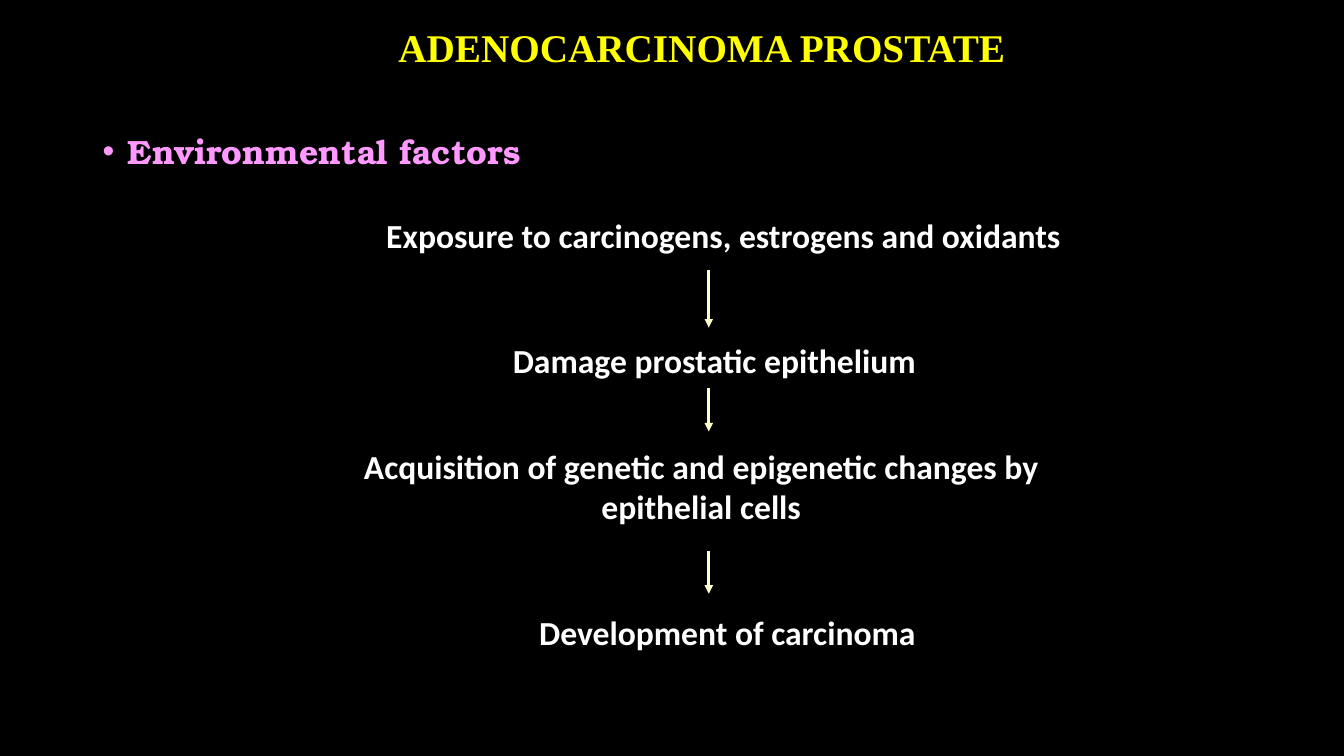
import pptx
import pptx.util
import pptx.dml.color
import pptx.enum.shapes
import pptx.enum.text
import pptx.oxml.ns
import lxml.etree

Inches, Pt = pptx.util.Inches, pptx.util.Pt
ALIGN = pptx.enum.text.PP_ALIGN
ANCHOR = pptx.enum.text.MSO_ANCHOR

COLORS = {"background": "000000", "title": "FFFF00", "heading": "FF99FF",
          "step": "FFFFFF", "arrow": "FFFFCC"}

# Content: text and its box (left, top, width, height) in inches
TITLE = ("ADENOCARCINOMA PROSTATE", (2.46, 0, 9, 0.98))
HEADING = ("Environmental factors", (0.92, 1.17, 4.83, 0.67))
STEPS = [
    ("Exposure to carcinogens, estrogens and oxidants", (3.3, 2.08, 7.75, 0.51)),
    ("Damage prostatic epithelium", (4.67, 3.32, 4.83, 0.51)),
    ("Acquisition of genetic and epigenetic changes by epithelial cells",
     (2.83, 4.37, 8.25, 0.91)),
    ("Development of carcinoma", (4.88, 6.02, 4.67, 0.5)),
]
ARROW_X = 7.03
ARROW_SPANS = [(2.68, 3.25), (3.85, 4.28), (5.47, 5.89)]


def rgb(name):
    return pptx.dml.color.RGBColor.from_string(COLORS[name])


def add_text(slide, text, place, font, size, color, align=ALIGN.CENTER, anchor=ANCHOR.TOP):
    box = slide.shapes.add_textbox(*map(Inches, place))
    box.text_frame.word_wrap = True
    box.text_frame.vertical_anchor = anchor
    para = box.text_frame.paragraphs[0]
    para.text = text
    para.alignment = align
    para.font.name = font
    para.font.size = Pt(size)
    para.font.bold = True
    para.font.color.rgb = rgb(color)
    return para


def add_bullet(para, indent):
    properties = para._p.get_or_add_pPr()
    properties.set("marL", str(Inches(indent)))
    properties.set("indent", str(-Inches(indent)))
    qn = pptx.oxml.ns.qn
    bullet_font = lxml.etree.Element(qn("a:buFont"), typeface="Arial")
    bullet = lxml.etree.Element(qn("a:buChar"), char="•")
    default_font = properties.find(qn("a:defRPr"))
    default_font.addprevious(bullet_font)
    default_font.addprevious(bullet)


def add_arrow(slide, x, top, bottom):
    arrow = slide.shapes.add_connector(
        pptx.enum.shapes.MSO_CONNECTOR.STRAIGHT,
        Inches(x), Inches(top), Inches(x), Inches(bottom))
    arrow.line.color.rgb = rgb("arrow")
    arrow.line.width = Pt(2)
    qn = pptx.oxml.ns.qn
    lxml.etree.SubElement(arrow.line._get_or_add_ln(), qn("a:tailEnd"), type="triangle")
    lxml.etree.SubElement(arrow._element.spPr, qn("a:effectLst"))


def main():
    deck = pptx.Presentation()
    deck.slide_width, deck.slide_height = Inches(13.33), Inches(7.5)
    slide = deck.slides.add_slide(deck.slide_layouts[6])
    slide.background.fill.solid()
    slide.background.fill.fore_color.rgb = rgb("background")

    # Title and heading
    title = add_text(slide, *TITLE, "Times New Roman", 28, "title", anchor=ANCHOR.MIDDLE)
    title.line_spacing = 0.9
    heading = add_text(slide, *HEADING, "TeX Gyre Bonum", 24, "heading", ALIGN.LEFT)
    heading.line_spacing = 1.2
    heading.space_before = Pt(10)
    add_bullet(heading, 0.25)

    # Flow of steps, joined by arrows
    for text, place in STEPS:
        add_text(slide, text, place, "Calibri", 24, "step")
    for top, bottom in ARROW_SPANS:
        add_arrow(slide, ARROW_X, top, bottom)

    deck.save("out.pptx")


if __name__ == "__main__":
    main()
